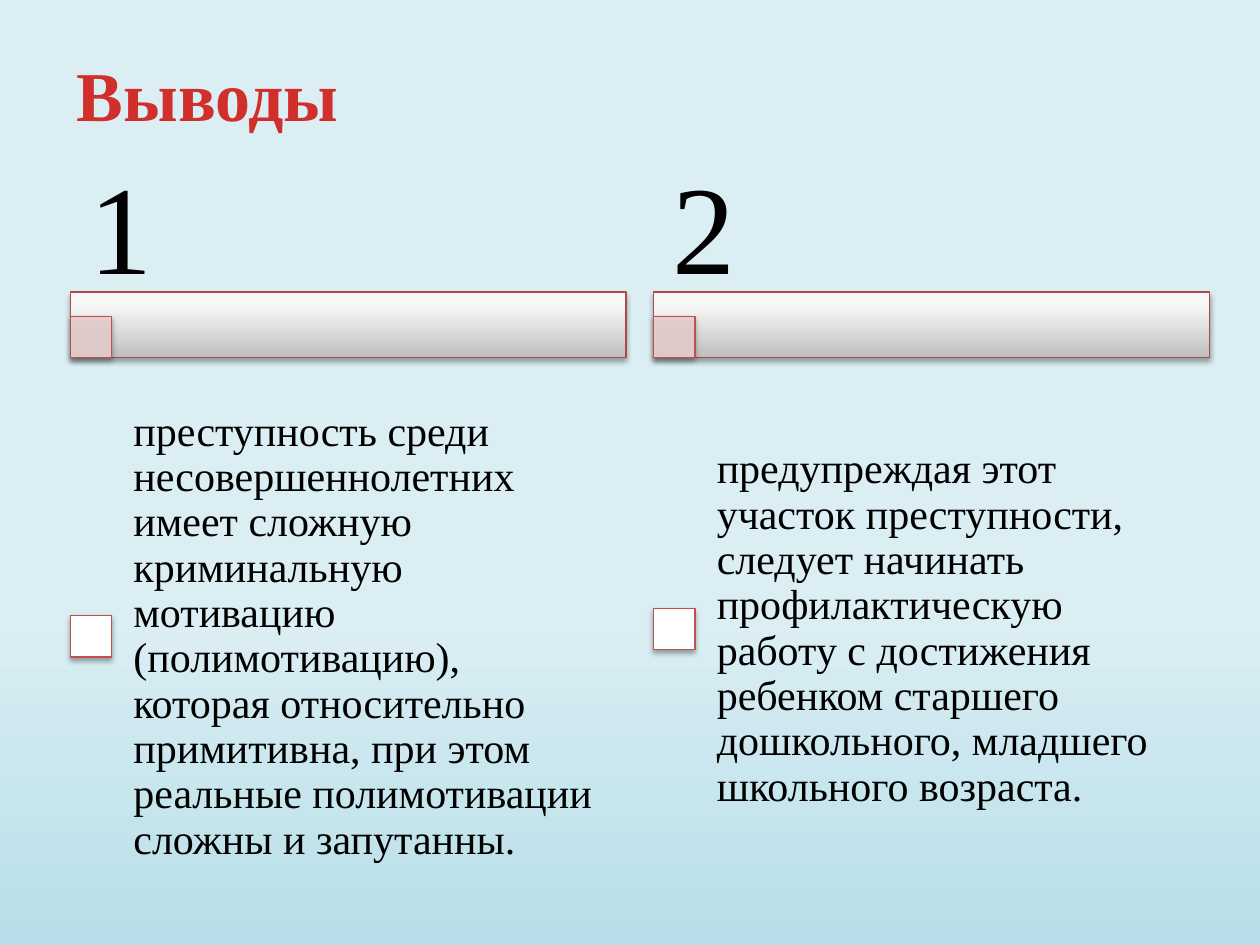
from lxml import etree
from pptx import Presentation
from pptx.dml.color import RGBColor
from pptx.enum.shapes import MSO_SHAPE
from pptx.enum.text import MSO_ANCHOR, MSO_AUTO_SIZE
from pptx.oxml.ns import qn
from pptx.util import Cm, Pt

RECT = MSO_SHAPE.RECTANGLE
MIDDLE = MSO_ANCHOR.MIDDLE
GROW = MSO_AUTO_SIZE.SHAPE_TO_FIT_TEXT

TITLE = "Выводы"
# number, conclusion, height of its text area in cm
POINTS = [
    ("1", "преступность среди несовершеннолетних имеет сложную криминальную "
          "мотивацию (полимотивацию), которая относительно примитивна, при этом "
          "реальные полимотивации сложны и запутанны.", 10.16),
    ("2", "предупреждая этот участок преступности, следует начинать "
          "профилактическую работу с достижения ребенком старшего дошкольного, "
          "младшего школьного возраста.", 9.86),
]

THEME = {
    "font": "Times New Roman",
    "title": 40, "number": 72, "body": 24, "line": 0.75,
    "text": "000000", "edge": "C0504D", "rim": "AE4946",
    "tint": "E8D0D0", "box": "FFFFFF", "shade": "000000",
    "sky": [(0, "DBEEF4"), (65, "DBEEF4"), (100, "B7DEE8")],
    "red": [(0, "FC7C7A"), (75, "D02F2C"), (100, "C70500")],
    "steel": [(0, "BEBEBE"), (80, "F7F7F7"), (100, "F8F8F8")],
}

LEFT, PITCH, WIDTH = 1.42, 11.76, 11.2
NUM_TOP, NUM_H = 3.53, 2.36
BAR_TOP, BAR_H = 5.89, 1.32
BODY_TOP, INDENT, MARK = 7.75, 0.79, 0.83


def add(parent, tag, **attrs):
    node = etree.SubElement(parent, qn(tag))
    for key, value in attrs.items():
        node.set(key, str(value))
    return node


def blend(fill, root, stops, angle):
    """Give fill a gradient; root is the XML that holds it, angle is clockwise."""
    fill.gradient()
    grad = next(root.iter(qn("a:gradFill")))
    bag = grad.find(qn("a:gsLst"))
    for old in list(bag):
        bag.remove(old)
    for place, color in stops:
        add(add(bag, "a:gs", pos=place * 1000), "a:srgbClr", val=color)
    grad.find(qn("a:lin")).set("ang", str(angle * 60000))


def add_rect(slide, x, y, w, h, edge, color=None, alpha=None):
    shape = slide.shapes.add_shape(RECT, Cm(x), Cm(y), Cm(w), Cm(h))
    root = shape.element.spPr
    if color:
        shape.fill.solid()
        shape.fill.fore_color.rgb = RGBColor.from_string(color)
        if alpha:
            tone = next(root.iter(qn("a:srgbClr")))
            add(tone, "a:alpha", val=alpha * 1000)
    else:
        blend(shape.fill, root, THEME["steel"], 270)
    shape.line.color.rgb = RGBColor.from_string(edge)
    shape.line.width = Pt(THEME["line"])
    shape.shadow.inherit = False
    cast = add(root.find(qn("a:effectLst")), "a:outerShdw", blurRad=Pt(3.1),
               dist=Pt(1.8), dir=90 * 60000, rotWithShape=0)
    add(add(cast, "a:srgbClr", val=THEME["shade"]), "a:alpha", val=35000)


def add_text(slide, text, size, x, y, w, h):
    box = slide.shapes.add_textbox(Cm(x), Cm(y), Cm(w), Cm(h))
    frame = box.text_frame
    frame.text = text
    font = frame.paragraphs[0].runs[0].font
    font.name = THEME["font"]
    font.size = Pt(size)
    return box, font


def add_block(slide, text, size, area, side, top):
    """Add wrapped, vertically centred text with the given insets in cm."""
    box, font = add_text(slide, text, size, *area)
    font.color.rgb = RGBColor.from_string(THEME["text"])
    frame = box.text_frame
    frame.word_wrap = True
    frame.vertical_anchor = MIDDLE
    frame.margin_left = frame.margin_right = Cm(side)
    frame.margin_top = frame.margin_bottom = Cm(top)
    frame.paragraphs[0].line_spacing = 0.9


def add_title(slide):
    box, font = add_text(slide, TITLE, THEME["title"], 1.3, 0.91, 5.84, 1.96)
    box.text_frame.word_wrap = False
    box.text_frame.auto_size = GROW
    font.bold = True
    blend(font.fill, box.element, THEME["red"], 90)


def add_point(slide, x, number, text, height):
    add_rect(slide, x, BAR_TOP, WIDTH, BAR_H, THEME["rim"])
    add_rect(slide, x, BAR_TOP + BAR_H - MARK, MARK, MARK,
             THEME["edge"], THEME["tint"], 90)
    add_block(slide, number, THEME["number"], (x, NUM_TOP, WIDTH, NUM_H), 0.38, 0.25)
    add_rect(slide, x, BODY_TOP + (height - MARK) / 2, MARK, MARK,
             THEME["edge"], THEME["box"])
    area = (x + INDENT, BODY_TOP, WIDTH - INDENT, height)
    add_block(slide, text, THEME["body"], area, 0.48, 0.48)


def main():
    deck = Presentation()
    deck.slide_width, deck.slide_height = Cm(25.4), Cm(19.05)
    slide = deck.slides.add_slide(deck.slide_layouts[6])
    blend(slide.background.fill, slide.element, THEME["sky"], 90)
    add_title(slide)
    for i, point in enumerate(POINTS):
        add_point(slide, LEFT + i * PITCH, *point)
    deck.save("out.pptx")


if __name__ == "__main__":
    main()
